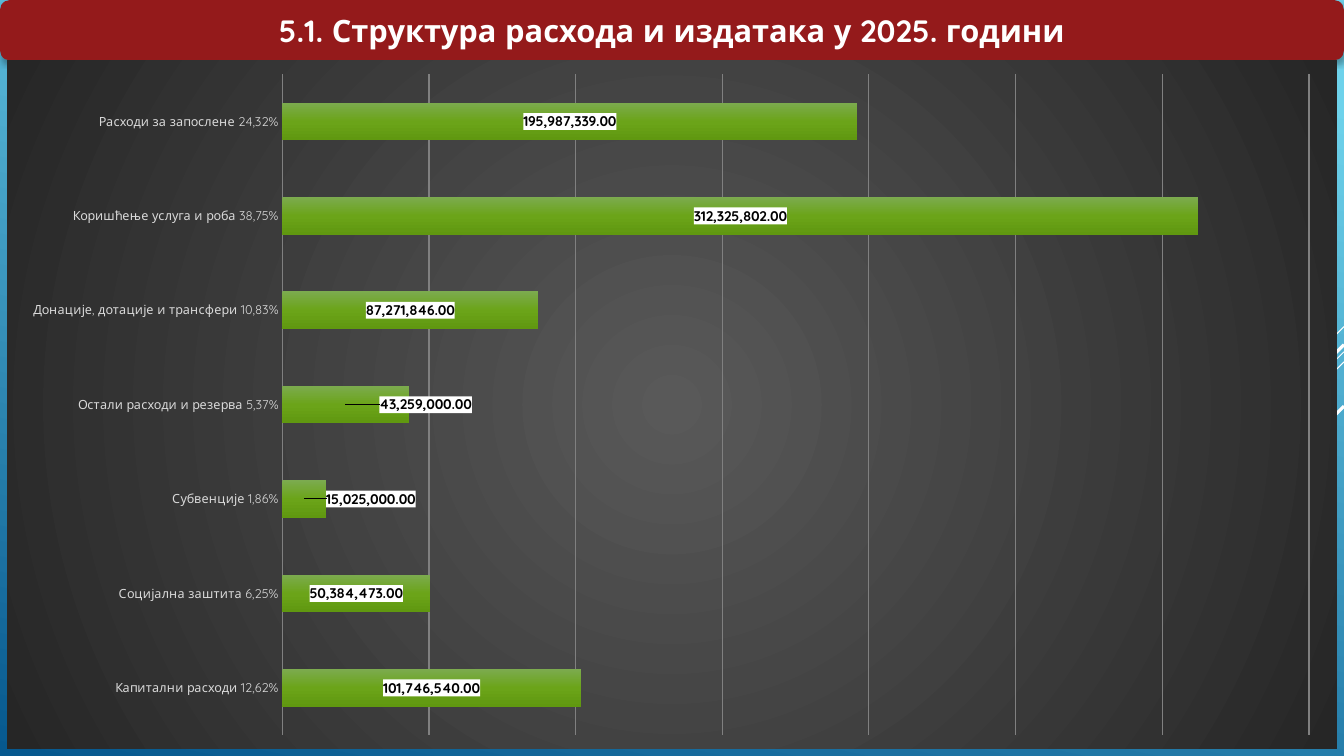
"""Build a slide with a bar chart of the structure of expenditures in 2025."""
from lxml.etree import SubElement
from pptx import Presentation
from pptx.chart.data import CategoryChartData
from pptx.dml.color import RGBColor
from pptx.enum.chart import XL_CHART_TYPE as ChartType, XL_LABEL_POSITION as LabelPosition
from pptx.enum.chart import XL_TICK_MARK as TickMark
from pptx.enum.shapes import MSO_CONNECTOR as Connector, MSO_SHAPE as Shape
from pptx.enum.text import MSO_ANCHOR as Anchor, PP_ALIGN as Align
from pptx.oxml import parse_xml
from pptx.oxml.ns import nsdecls, qn
from pptx.util import Inches, Pt

FONT = "Quicksand"
NUMBER_FORMAT = "#,##0.00"
WHITE = RGBColor(0xFF, 0xFF, 0xFF)
BLACK = RGBColor(0x00, 0x00, 0x00)
RED = RGBColor(0x94, 0x1A, 0x1B)
GRID_GRAY = RGBColor(0x80, 0x80, 0x80)
LABEL_GRAY = RGBColor(0xD9, 0xD9, 0xD9)
SKY = RGBColor(0x6E, 0xD2, 0xEB)
DEEP_BLUE = RGBColor(0x06, 0x58, 0x8E)
CHART_CENTER = RGBColor(0x59, 0x59, 0x59)
CHART_EDGE = RGBColor(0x26, 0x26, 0x26)
BAR_TOP = RGBColor(0x7C, 0xAB, 0x4F)
BAR_MIDDLE = RGBColor(0x6B, 0xA4, 0x19)
BAR_BOTTOM = RGBColor(0x60, 0x98, 0x10)

EXPENSES = [
    ("Капитални расходи 12,62%", 101746540),
    ("Социјална заштита 6,25%", 50384473),
    ("Субвенције 1,86%", 15025000),
    ("Остали расходи и резерва 5,37%", 43259000),
    ("Донације, дотације и трансфери 10,83%", 87271846),
    ("Коришћење услуга и роба 38,75%", 312325802),
    ("Расходи за запослене 24,32%", 195987339),
]
LABEL_SHIFTS = {2: 0.05, 3: 0.06}
DIAGONALS = [(3.24, 1, 0.75), (3.49, 3.26, 0.75), (3.59, 2.07, 0.75), (3.42, 1.91, 2.25), (4.03, 1.39, 2.25)]


def gradient(stops, direction):
    """Return a gradient fill with the given (percent, colour) stops."""
    stop_list = "".join(
        f'<a:gs pos="{percent * 1000}"><a:srgbClr val="{color}"/></a:gs>' for percent, color in stops)
    return parse_xml(f'<a:gradFill {nsdecls("a")} rotWithShape="1"><a:gsLst>{stop_list}</a:gsLst>{direction}</a:gradFill>')


def format_labels(labels, element):
    """Give value labels a bold black font on a white box."""
    font = labels.font
    font.name, font.size, font.bold = FONT, Pt(10), True
    font.color.rgb = BLACK
    labels.position = LabelPosition.CENTER
    element.find(qn("c:txPr")).addprevious(parse_xml(
        f'<c:spPr {nsdecls("c", "a")}><a:solidFill><a:srgbClr val="{WHITE}"/></a:solidFill></c:spPr>'))


presentation = Presentation()
presentation.slide_width, presentation.slide_height = Inches(13.33), Inches(7.5)
width, height = presentation.slide_width, presentation.slide_height
slide = presentation.slides.add_slide(presentation.slide_layouts[6])
slide.background.fill.solid()
background_fill = next(slide.element.iter(qn("a:solidFill")))
background_fill.getparent().replace(
    background_fill, gradient([(10, SKY), (100, DEEP_BLUE)], '<a:lin ang="6120000" scaled="0"/>'))

for top, reach, weight in DIAGONALS:
    line = slide.shapes.add_connector(
        Connector.STRAIGHT, width, Inches(top), width - Inches(reach), Inches(top + reach))
    line.line.color.rgb = WHITE
    line.line.width = Pt(weight)
    SubElement(line.element.spPr, qn("a:effectLst"))

title_height = int(height * 0.08)
title = slide.shapes.add_shape(Shape.ROUNDED_RECTANGLE, 0, 0, width, title_height)
title.fill.solid()
title.fill.fore_color.rgb = RED
title.line.fill.background()
title.shadow.inherit = False
title.element.spPr.find(qn("a:effectLst")).append(parse_xml(
    f'<a:outerShdw {nsdecls("a")} blurRad="{Pt(3.5)}" dist="{Pt(2.2)}" dir="5400000" rotWithShape="0">'
    f'<a:srgbClr val="{BLACK}"><a:alpha val="32000"/></a:srgbClr></a:outerShdw>'))
title.text_frame.text = "5.1. Структура расхода и издатака у 2025. години"
title.text_frame.vertical_anchor = Anchor.MIDDLE
paragraph = title.text_frame.paragraphs[0]
paragraph.alignment = Align.CENTER
title_font = paragraph.runs[0].font
title_font.name, title_font.size, title_font.bold = FONT, Pt(22), True
title_font.color.rgb = WHITE

chart_data = CategoryChartData(number_format=NUMBER_FORMAT)
chart_data.categories = [name for name, amount in EXPENSES]
chart_data.add_series("Series 1", [amount for name, amount in EXPENSES])
margin = Inches(0.07)
chart = slide.shapes.add_chart(
    ChartType.BAR_STACKED, margin, title_height, width - 2 * margin, height - title_height - margin, chart_data).chart
chart.has_legend = chart.has_title = False
chart.font.name, chart.font.size = FONT, Pt(10)
chart.font.color.rgb = WHITE

chart_space = chart.element
chart_properties = parse_xml(f'<c:spPr {nsdecls("c", "a")}><a:ln><a:noFill/></a:ln></c:spPr>')
chart_properties.insert(0, gradient(
    [(0, CHART_CENTER), (100, CHART_EDGE)],
    '<a:path path="circle"><a:fillToRect l="50000" t="50000" r="50000" b="50000"/></a:path>'))
chart_space.find(qn("c:chart")).addnext(chart_properties)
plot_area = chart_space.find(qn("c:chart")).find(qn("c:plotArea"))
for old_layout in plot_area.findall(qn("c:layout")):
    plot_area.remove(old_layout)
plot_area.insert(0, parse_xml(
    f'<c:layout {nsdecls("c")}><c:manualLayout><c:layoutTarget val="inner"/><c:xMode val="edge"/>'
    '<c:yMode val="edge"/><c:x val="0.207"/><c:y val="0.02"/><c:w val="0.772"/><c:h val="0.96"/>'
    '</c:manualLayout></c:layout>'))

category_axis = chart.category_axis
category_axis.major_tick_mark = category_axis.minor_tick_mark = TickMark.NONE
category_axis.format.line.fill.background()
category_font = category_axis.tick_labels.font
category_font.name, category_font.size = FONT, Pt(9)
category_font.color.rgb = LABEL_GRAY

value_axis = chart.value_axis
value_axis.visible = False
value_axis.minimum_scale, value_axis.maximum_scale, value_axis.major_unit = 0, 350000000, 50000000
value_axis.tick_labels.number_format = NUMBER_FORMAT
value_axis.has_major_gridlines = True
grid_line = value_axis.major_gridlines.format.line
grid_line.color.rgb = GRID_GRAY
grid_line.width = Pt(0.75)

plot = chart.plots[0]
plot.gap_width, plot.overlap, plot.vary_by_categories = 150, 100, False
series = plot.series[0]
series.invert_if_negative = False
series.format.fill.solid()
bar_fill = next(series.format.element.iter(qn("a:solidFill"))) if hasattr(series.format, "element") else next(
    plot_area.find(qn("c:barChart")).find(qn("c:ser")).iter(qn("a:solidFill")))
bar_fill.getparent().replace(bar_fill, gradient(
    [(0, BAR_TOP), (50, BAR_MIDDLE), (100, BAR_BOTTOM)], '<a:lin ang="5400000" scaled="0"/>'))

labels = series.data_labels
labels.show_value = True
labels.number_format, labels.number_format_is_linked = NUMBER_FORMAT, False
labels_element = next(plot_area.iter(qn("c:dLbls")))
format_labels(labels, labels_element)
for index, shift in LABEL_SHIFTS.items():
    point_label = series.points[index].data_label
    point_label.position = LabelPosition.CENTER
    point_element = labels_element.findall(qn("c:dLbl"))[-1]
    format_labels(point_label, point_element)
    point_element.find(qn("c:idx")).addnext(parse_xml(
        f'<c:layout {nsdecls("c")}><c:manualLayout><c:x val="{shift}"/><c:y val="0"/></c:manualLayout></c:layout>'))
    point_element.find(qn("c:spPr")).addprevious(parse_xml(
        f'<c:numFmt {nsdecls("c")} formatCode="{NUMBER_FORMAT}" sourceLinked="0"/>'))

presentation.save("out.pptx")
